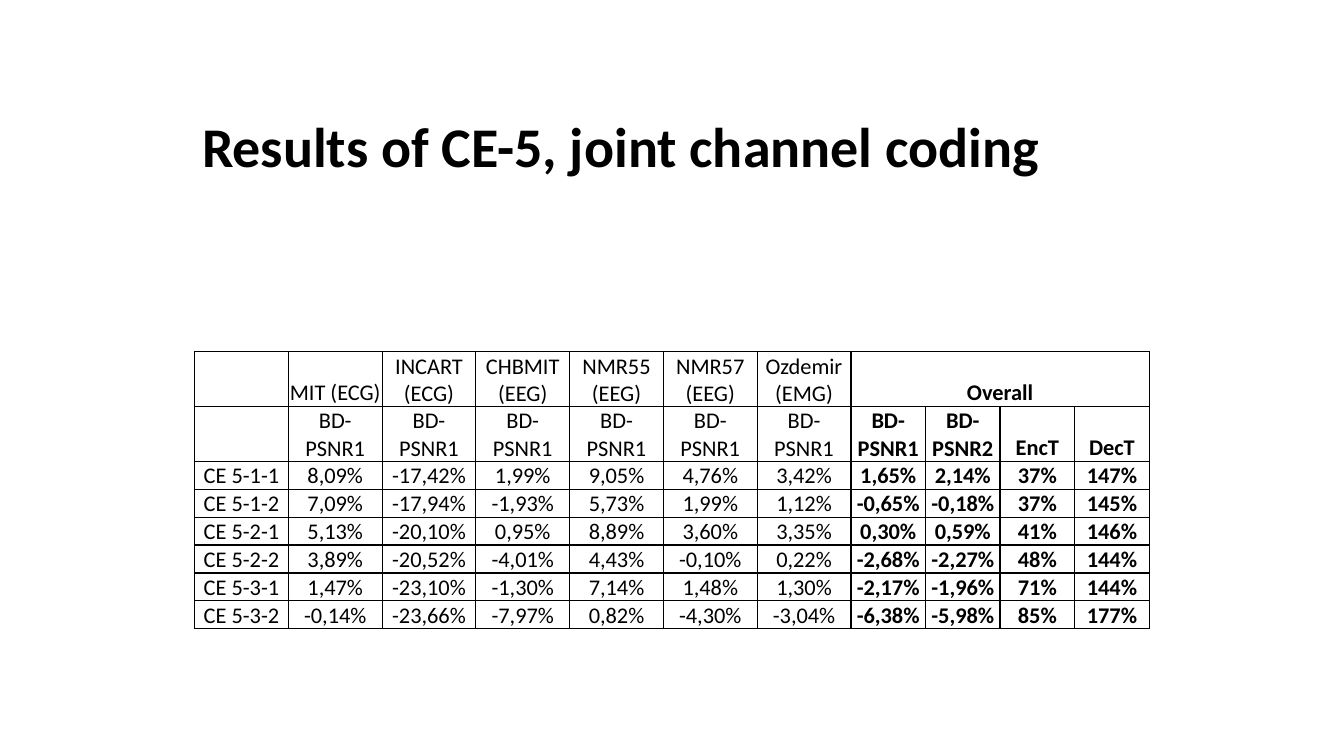
import pptx
import pptx.dml.color
import pptx.enum.text
import pptx.oxml
import pptx.oxml.ns
import pptx.util
from pptx.util import Inches

BLACK = pptx.dml.color.RGBColor(0x00, 0x00, 0x00)

# Table content
DATASETS = ["MIT (ECG)", "INCART (ECG)", "CHBMIT (EEG)", "NMR55 (EEG)",
            "NMR57 (EEG)", "Ozdemir (EMG)"]
OVERALL = ["BD-PSNR1", "BD-PSNR2", "EncT", "DecT"]
RESULTS = """
CE 5-1-1|8,09%|-17,42%|1,99%|9,05%|4,76%|3,42%|1,65%|2,14%|37%|147%
CE 5-1-2|7,09%|-17,94%|-1,93%|5,73%|1,99%|1,12%|-0,65%|-0,18%|37%|145%
CE 5-2-1|5,13%|-20,10%|0,95%|8,89%|3,60%|3,35%|0,30%|0,59%|41%|146%
CE 5-2-2|3,89%|-20,52%|-4,01%|4,43%|-0,10%|0,22%|-2,68%|-2,27%|48%|144%
CE 5-3-1|1,47%|-23,10%|-1,30%|7,14%|1,48%|1,30%|-2,17%|-1,96%|71%|144%
CE 5-3-2|-0,14%|-23,66%|-7,97%|0,82%|-4,30%|-3,04%|-6,38%|-5,98%|85%|177%
"""
FIRST_OVERALL = 1 + len(DATASETS)
ROWS = [
    [""] + DATASETS + ["Overall"] + [""] * (len(OVERALL) - 1),
    [""] + ["BD-PSNR1"] * len(DATASETS) + OVERALL,
] + [line.split("|") for line in RESULTS.strip().splitlines()]


def assign(target, values):
    for name, value in values.items():
        setattr(target, name, value)


class SlideBuilder:
    """Holds the text style and the current slide."""

    font_name = "Calibri"
    border_width = pptx.util.Pt(1)

    def __init__(self, deck):
        self.slide = deck.slides.add_slide(deck.slide_layouts[5])

    def add_text(self, frame, text, size, bold):
        para = frame.paragraphs[0]
        para.alignment = pptx.enum.text.PP_ALIGN.CENTER
        if not text:
            para.font.size = pptx.util.Pt(size)
            return
        span = para.add_run()
        span.text = text
        assign(span.font, {"name": self.font_name, "size": pptx.util.Pt(size), "bold": bold})
        span.font.color.rgb = BLACK

    def add_title(self, text, left, top, width, height):
        box = self.slide.shapes.title
        assign(box, {"left": Inches(left), "top": Inches(top),
                     "width": Inches(width), "height": Inches(height)})
        assign(box.text_frame, {
            "word_wrap": True,
            "auto_size": pptx.enum.text.MSO_AUTO_SIZE.SHAPE_TO_FIT_TEXT,
            "vertical_anchor": pptx.enum.text.MSO_ANCHOR.MIDDLE,
        })
        self.add_text(box.text_frame, text, 40, True)

    def add_borders(self, cell):
        properties = cell._tc.get_or_add_tcPr()
        for index, side in enumerate(("lnL", "lnR", "lnT", "lnB")):
            properties.insert(index, pptx.oxml.parse_xml(
                f'<a:{side} {pptx.oxml.ns.nsdecls("a")} w="{self.border_width}">'
                f'<a:solidFill><a:srgbClr val="{BLACK}"/></a:solidFill></a:{side}>'))

    def add_table(self, rows, left, top, widths, heights, first_bold):
        frame = self.slide.shapes.add_table(
            len(rows), len(widths), Inches(left), Inches(top),
            Inches(sum(widths)), Inches(sum(heights)))
        table = frame.table
        assign(table, {"first_row": False, "horz_banding": False})
        for column, width in zip(table.columns, widths):
            column.width = Inches(width)
        for row, height in zip(table.rows, heights):
            row.height = Inches(height)
        for row_index, values in enumerate(rows):
            for column_index, text in enumerate(values):
                cell = table.cell(row_index, column_index)
                cell.fill.background()
                assign(cell, {
                    "margin_left": Inches(0.01), "margin_right": Inches(0.01),
                    "margin_top": Inches(0.01), "margin_bottom": 0,
                    "vertical_anchor": pptx.enum.text.MSO_ANCHOR.BOTTOM,
                })
                self.add_text(cell.text_frame, text, 16, column_index >= first_bold)
                self.add_borders(cell)
        return table


def main():
    deck = pptx.Presentation()
    assign(deck, {"slide_width": Inches(13.33), "slide_height": Inches(7.5)})
    builder = SlideBuilder(deck)

    # Title
    builder.add_title("Results of CE-5, joint channel coding", 0.7, 1.05, 10.91, 0.77)

    # Results table, with one heading over the overall columns
    widths = [0.93] * FIRST_OVERALL + [0.74] * len(OVERALL)
    heights = [0.54] * 2 + [0.27] * (len(ROWS) - 2)
    table = builder.add_table(ROWS, 1.93, 3.49, widths, heights, FIRST_OVERALL)
    table.cell(0, FIRST_OVERALL).merge(table.cell(0, len(widths) - 1))

    deck.save("out.pptx")


if __name__ == "__main__":
    main()
